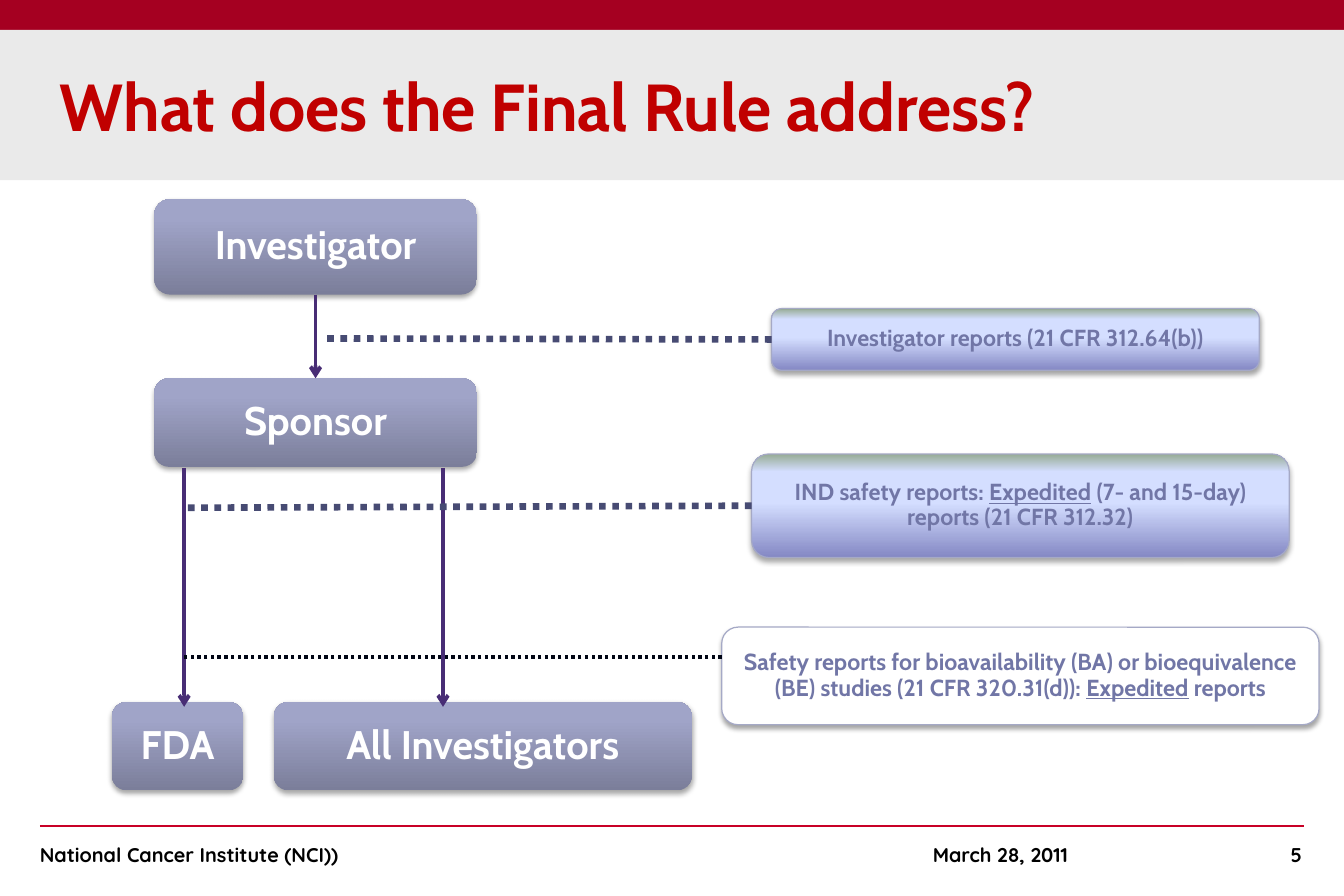
from lxml import etree
from pptx import Presentation
from pptx.dml.color import RGBColor
from pptx.enum.dml import MSO_LINE
from pptx.enum.shapes import MSO_CONNECTOR, MSO_SHAPE
from pptx.enum.text import MSO_ANCHOR, PP_ALIGN
from pptx.oxml.ns import qn
from pptx.util import Inches, Pt

RECTANGLE, ROUNDED = MSO_SHAPE.RECTANGLE, MSO_SHAPE.ROUNDED_RECTANGLE
STRAIGHT, DOTTED = MSO_CONNECTOR.STRAIGHT, MSO_LINE.ROUND_DOT
LEFT, CENTER, RIGHT = PP_ALIGN.LEFT, PP_ALIGN.CENTER, PP_ALIGN.RIGHT
MIDDLE = MSO_ANCHOR.MIDDLE
TOP_SIDE, LEFT_SIDE, BOTTOM_SIDE = 0, 1, 2

# The grid has square cells, 24 to the inch
COLUMNS, ROWS = 270, 180
CELL = Inches(1) // 24

HEADING_FONT, FOOTER_FONT = "Cabin", "Quicksand"
ARROW_COLOR, DOT_COLOR, BORDER_COLOR = "482D75", "474B73", "A5A9C6"
PARTY_FILL = [(0, "7B7E9A"), (80, "A0A4C8"), (100, "A0A4CA")]
REPORT_FILL = [(0, "8488C4"), (53, "D4DEFF"), (83, "D4DEFF"), (100, "96AB94")]


def color(value):
    return RGBColor.from_string(value)


def add_node(parent, tag, **attributes):
    values = {name: str(value) for name, value in attributes.items()}
    return etree.SubElement(parent, qn("a:" + tag), values)


def write_text(shape, text, size=12, hue="000000", font=HEADING_FONT,
               align=LEFT, spacing=1.0, margins=(0.1, 0.1)):
    """Write bold text; parts between underscores are underlined."""
    frame = shape.text_frame
    frame.word_wrap = True
    frame.vertical_anchor = MIDDLE
    frame.margin_left, frame.margin_right = map(Inches, margins)
    paragraph = frame.paragraphs[0]
    paragraph.alignment = align
    paragraph.line_spacing = spacing
    for index, part in enumerate(text.split("_")):
        run = paragraph.add_run()
        run.text = part
        run.font.name = font
        run.font.size = Pt(size)
        run.font.bold = True
        run.font.underline = index % 2 == 1
        run.font.color.rgb = color(hue)


class FlowSlide:
    def __init__(self, presentation):
        self.slide = presentation.slides.add_slide(presentation.slide_layouts[6])
        self.shapes = self.slide.shapes

    def band(self, top, height, fill):
        return self.box(RECTANGLE, (0, top, COLUMNS, height), fill)

    def box(self, kind, area, fill, border=None):
        shape = self.shapes.add_shape(kind, *(round(CELL * cells) for cells in area))
        shape.shadow.inherit = False
        if isinstance(fill, str):
            shape.fill.solid()
            shape.fill.fore_color.rgb = color(fill)
        else:
            self.gradient(shape, fill)
        if border:
            shape.line.color.rgb = color(border)
            shape.line.width = Pt(0.75)
        else:
            shape.line.fill.background()
        return shape

    def gradient(self, shape, stops):
        """Fill from bottom to top with the given stops."""
        shape.fill.gradient()
        gradient = shape._element.spPr.find(qn("a:gradFill"))
        for child in list(gradient):
            gradient.remove(child)
        stop_list = add_node(gradient, "gsLst")
        for position, value in stops:
            stop = add_node(stop_list, "gs", pos=position * 1000)
            add_node(stop, "srgbClr", val=value)
        add_node(gradient, "lin", ang=270 * 60000, scaled=0)

    def card(self, area, text, size, hue, fill, border=None):
        shape = self.box(ROUNDED, area, fill, border)
        effects = shape._element.spPr.find(qn("a:effectLst"))
        shadow = add_node(effects, "outerShdw", blurRad=Pt(3.1), dist=Pt(1.8),
                          dir=90 * 60000, rotWithShape=0)
        add_node(add_node(shadow, "srgbClr", val="000000"), "alpha", val=35000)
        write_text(shape, text, size=size, hue=hue, align=CENTER, spacing=0.9)
        return shape

    def party(self, area, text):
        return self.card(area, text, 24, "FFFFFF", PARTY_FILL)

    def report(self, area, text, fill=REPORT_FILL):
        return self.card(area, text, 14, "7176A6", fill, BORDER_COLOR)

    def line(self, start, end, hue, width, dotted=False, arrow=False):
        points = [round(CELL * cells) for cells in (*start, *end)]
        connector = self.shapes.add_connector(STRAIGHT, *points)
        connector.line.color.rgb = color(hue)
        connector.line.width = Pt(width)
        if dotted:
            connector.line.dash_style = DOTTED
        if arrow:
            add_node(connector.line._get_or_add_ln(), "tailEnd", type="arrow")
        add_node(connector._element.spPr, "effectLst")
        return connector

    def arrow(self, start, end):
        return self.line(start, end, ARROW_COLOR, 2.25, arrow=True)

    def footer(self, left, width, text, align=LEFT):
        area = (left, 168, width, 7.2)
        shape = self.shapes.add_textbox(*(round(CELL * cells) for cells in area))
        write_text(shape, text, font=FOOTER_FONT, align=align, margins=(0, 0))


def main():
    presentation = Presentation()
    presentation.slide_width = CELL * COLUMNS
    presentation.slide_height = CELL * ROWS
    flow = FlowSlide(presentation)

    # Header
    flow.band(0, 6, "A50021")
    title = flow.band(6, 30.2, "EAEAEA")
    write_text(title, "What does the Final Rule address?", size=40,
               hue="C00000", margins=(0.5, 0.1))

    # Footer
    flow.line((8, 166), (262, 166), "C80026", 1)
    flow.footer(8, 100, "National Cancer Institute (NCI))")
    flow.footer(187.4, 40, "March 28, 2011")
    flow.footer(232, 29.6, "5", RIGHT)

    # Parties
    investigator = flow.party((31, 40, 64.8, 19.2), "Investigator")
    sponsor = flow.party((31, 76, 64.8, 17.8), "Sponsor")
    flow.party((22.5, 141, 26.4, 17.8), "FDA")
    flow.party((55, 141, 84, 17.8), "All Investigators")

    # Reports
    investigator_report = flow.report(
        (155, 62, 98, 12.4), "Investigator reports (21 CFR 312.64(b))")
    safety_report = flow.report(
        (151, 91.2, 108, 20.8),
        "IND safety reports: _Expedited_ (7- and 15-day) reports (21 CFR 312.32)")
    flow.report(
        (145, 126, 120, 19.6),
        "Safety reports for bioavailability (BA) or bioequivalence (BE) "
        "studies (21 CFR 320.31(d)): _Expedited_ reports", "FFFFFF")

    # Arrows between the parties
    first_step = flow.arrow((63.4, 59.2), (63.4, 76))
    first_step.begin_connect(investigator, BOTTOM_SIDE)
    first_step.end_connect(sponsor, TOP_SIDE)
    for column in (37, 89):
        flow.arrow((column, 94), (column, 142))

    # Dotted lines from the reports to the arrows
    for report, start, end in (
            (investigator_report, (155, 68.2), (65, 68)),
            (safety_report, (151, 101.6), (37, 102))):
        link = flow.line(start, end, DOT_COLOR, 4, dotted=True)
        link.begin_connect(report, LEFT_SIDE)
    flow.line((145, 132), (37, 132), "000514", 2, dotted=True)

    presentation.save("out.pptx")


if __name__ == "__main__":
    main()
